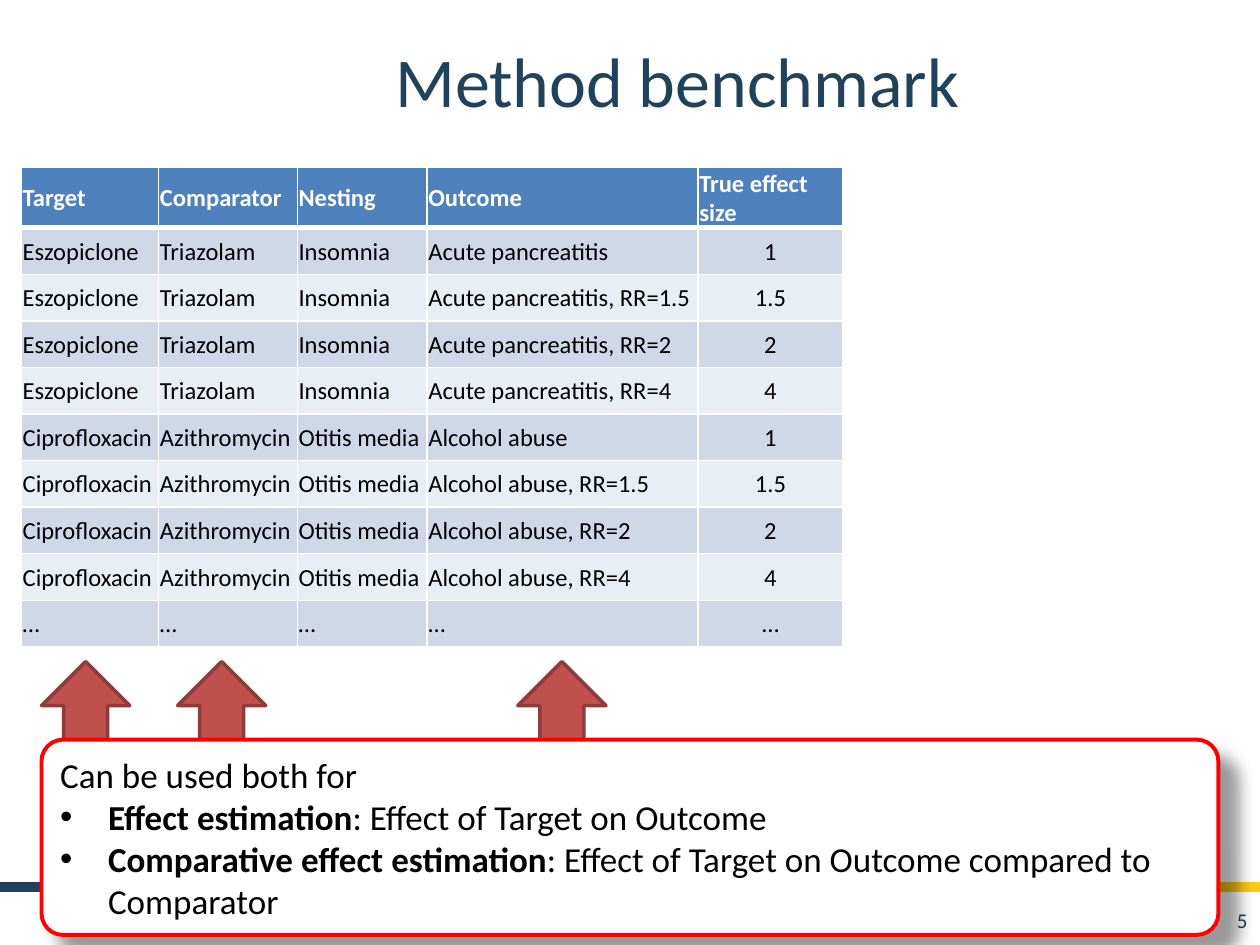
from dataclasses import dataclass
import copy

import lxml.etree
import pptx
import pptx.dml.color
import pptx.enum.shapes
import pptx.enum.text
import pptx.oxml.ns
import pptx.util

COLUMNS, ROWS = 100, 75
CELL = pptx.util.Inches(0.1)
FONT = "Calibri"
COLORS = {
    "navy": "20425A", "orange": "EB6622", "yellow": "FCCB10",
    "white": "FFFFFF", "black": "000000", "red": "FF0000",
    "brick": "C0504D", "brick_edge": "8E3B39",
    "header": "4F81BD", "odd_row": "D0D8E8", "even_row": "E9EDF4",
}
SHAPES = pptx.enum.shapes.MSO_SHAPE
ALIGN = pptx.enum.text.PP_ALIGN
MIDDLE = pptx.enum.text.MSO_ANCHOR.MIDDLE
qn = pptx.oxml.ns.qn


@dataclass
class Area:
    left: float
    top: float
    width: float
    height: float

    def lengths(self) -> list[int]:
        return [grid(value) for value in (self.left, self.top, self.width, self.height)]


@dataclass
class Style:
    size: float
    color: str
    bold: bool = False


@dataclass
class Case:
    target: str
    comparator: str
    nesting: str
    outcome: str


@dataclass
class Point:
    term: str
    meaning: str


CASES = [
    Case("Eszopiclone", "Triazolam", "Insomnia", "Acute pancreatitis"),
    Case("Ciprofloxacin", "Azithromycin", "Otitis media", "Alcohol abuse"),
]
EFFECT_SIZES = ["1", "1.5", "2", "4"]
HEADINGS = ["Target", "Comparator", "Nesting", "Outcome", "True effect size"]
COLUMN_WIDTHS = [10.9, 11, 10.3, 21.5, 11.5]
HEADER_HEIGHT, ROW_HEIGHT = 4.6, 3.7
ARROW_LEFTS = [3.3, 41.1, 14.1]
POINTS = [
    Point("Effect estimation", ": Effect of Target on Outcome"),
    Point("Comparative effect estimation",
          ": Effect of Target on Outcome compared to Comparator"),
]


def grid(count: float) -> int:
    return round(count * CELL)


def rgb(name: str) -> pptx.dml.color.RGBColor:
    return pptx.dml.color.RGBColor.from_string(COLORS[name])


def add_run(paragraph, text: str, style: Style) -> None:
    run = paragraph.add_run()
    run.text = text
    run.font.name = FONT
    run.font.size = pptx.util.Pt(style.size)
    run.font.bold = style.bold
    run.font.color.rgb = rgb(style.color)


def add_label(slide, area: Area, text: str, style: Style, alignment) -> None:
    frame = slide.shapes.add_textbox(*area.lengths()).text_frame
    frame.word_wrap = True
    frame.vertical_anchor = MIDDLE
    paragraph = frame.paragraphs[0]
    paragraph.alignment = alignment
    add_run(paragraph, text, style)


def add_solid(slide, kind, area: Area, fill: str, line: str, weight: float):
    shape = slide.shapes.add_shape(kind, *area.lengths())
    shape.shadow.inherit = False
    shape.fill.solid()
    shape.fill.fore_color.rgb = rgb(fill)
    shape.line.color.rgb = rgb(line)
    shape.line.width = pptx.util.Pt(weight)
    return shape


def add_footer_bar(slide) -> None:
    bar = slide.shapes.add_shape(SHAPES.RECTANGLE, *Area(0, 70, COLUMNS, 0.8).lengths())
    bar.shadow.inherit = False
    bar.line.fill.background()
    bar.fill.gradient()
    bar.fill.gradient_angle = 0
    stop_list = next(bar._element.spPr.iter(qn("a:gsLst")))
    stop_list.append(copy.deepcopy(stop_list[0]))
    stops = [(0.44, "navy"), (0.55, "orange"), (1, "yellow")]
    for stop, (position, color) in zip(bar.fill.gradient_stops, stops):
        stop.position = position
        stop.color.rgb = rgb(color)


def add_color(parent, color: str):
    return lxml.etree.SubElement(parent, qn("a:srgbClr"), val=COLORS[color])


def add_borders(cell, top: float, bottom: float) -> None:
    properties = cell._tc.get_or_add_tcPr()
    for side, weight in (("L", 1), ("R", 1), ("T", top), ("B", bottom)):
        line = lxml.etree.SubElement(
            properties, qn(f"a:ln{side}"), w=str(pptx.util.Pt(weight)))
        add_color(lxml.etree.SubElement(line, qn("a:solidFill")), "white")


def fill_cell(cell, text: str, row: int, centered: bool) -> None:
    is_header = row == 0
    add_borders(cell, 3 if row == 1 else 1, 3 if is_header else 1)
    cell.fill.solid()
    cell.fill.fore_color.rgb = rgb(
        "header" if is_header else "odd_row" if row % 2 else "even_row")
    cell.vertical_anchor = MIDDLE
    cell.margin_left = cell.margin_right = cell.margin_top = grid(0.1)
    cell.margin_bottom = 0
    paragraph = cell.text_frame.paragraphs[0]
    paragraph.alignment = ALIGN.CENTER if centered else ALIGN.LEFT
    add_run(paragraph, text, Style(14, "white" if is_header else "black", is_header))


def benchmark_rows() -> list[list[str]]:
    rows = [HEADINGS]
    for case in CASES:
        for size in EFFECT_SIZES:
            suffix = "" if size == "1" else f", RR={size}"
            rows.append([case.target, case.comparator, case.nesting,
                         case.outcome + suffix, size])
    return rows + [["…"] * len(HEADINGS)]


def add_benchmark_table(slide) -> None:
    rows = benchmark_rows()
    heights = [HEADER_HEIGHT] + [ROW_HEIGHT] * (len(rows) - 1)
    area = Area(1.7, 13.3, sum(COLUMN_WIDTHS), sum(heights))
    table = slide.shapes.add_table(len(rows), len(HEADINGS), *area.lengths()).table
    for column, width in zip(table.columns, COLUMN_WIDTHS):
        column.width = grid(width)
    for row, (texts, height) in enumerate(zip(rows, heights)):
        table.rows[row].height = grid(height)
        for column, text in enumerate(texts):
            centered = row > 0 and column == len(HEADINGS) - 1
            fill_cell(table.cell(row, column), text, row, centered)


def add_bullet(paragraph) -> None:
    properties = paragraph._p.get_or_add_pPr()
    indent = grid(3.8)
    properties.set("marL", str(indent))
    properties.set("indent", str(-indent))
    lxml.etree.SubElement(properties, qn("a:buFont"), typeface="Arial")
    lxml.etree.SubElement(properties, qn("a:buChar"), char="•")


def add_callout(slide) -> None:
    callout = add_solid(slide, SHAPES.ROUNDED_RECTANGLE,
                        Area(3.3, 58.7, 93.4, 15.5), "white", "red", 2.25)
    callout.adjustments[0] = 0.11
    shadow = lxml.etree.SubElement(
        callout._element.spPr.find(qn("a:effectLst")), qn("a:outerShdw"),
        blurRad=str(pptx.util.Pt(9)), dist=str(pptx.util.Pt(14)),
        dir=str(45 * 60000), algn="tl", rotWithShape="0")
    lxml.etree.SubElement(add_color(shadow, "black"), qn("a:alpha"), val="40000")
    frame = callout.text_frame
    frame.word_wrap = True
    frame.vertical_anchor = MIDDLE
    frame.paragraphs[0].alignment = ALIGN.LEFT
    add_run(frame.paragraphs[0], "Can be used both for", Style(20, "black"))
    for point in POINTS:
        paragraph = frame.add_paragraph()
        paragraph.alignment = ALIGN.LEFT
        add_bullet(paragraph)
        add_run(paragraph, point.term, Style(20, "black", True))
        add_run(paragraph, point.meaning, Style(20, "black"))


def main() -> None:
    presentation = pptx.Presentation()
    presentation.slide_width, presentation.slide_height = grid(COLUMNS), grid(ROWS)
    slide = presentation.slides.add_slide(presentation.slide_layouts[6])
    add_footer_bar(slide)
    add_label(slide, Area(12.5, 1.7, 82.5, 9.2), "Method benchmark",
              Style(40, "navy"), ALIGN.CENTER)
    add_label(slide, Area(76.7, 71, 23.3, 4), "5", Style(12, "navy"), ALIGN.RIGHT)
    for left in ARROW_LEFTS:
        add_solid(slide, SHAPES.UP_ARROW, Area(left, 52.5, 7, 7.2),
                  "brick", "brick_edge", 2)
    add_callout(slide)
    add_benchmark_table(slide)
    presentation.save("out.pptx")


if __name__ == "__main__":
    main()
